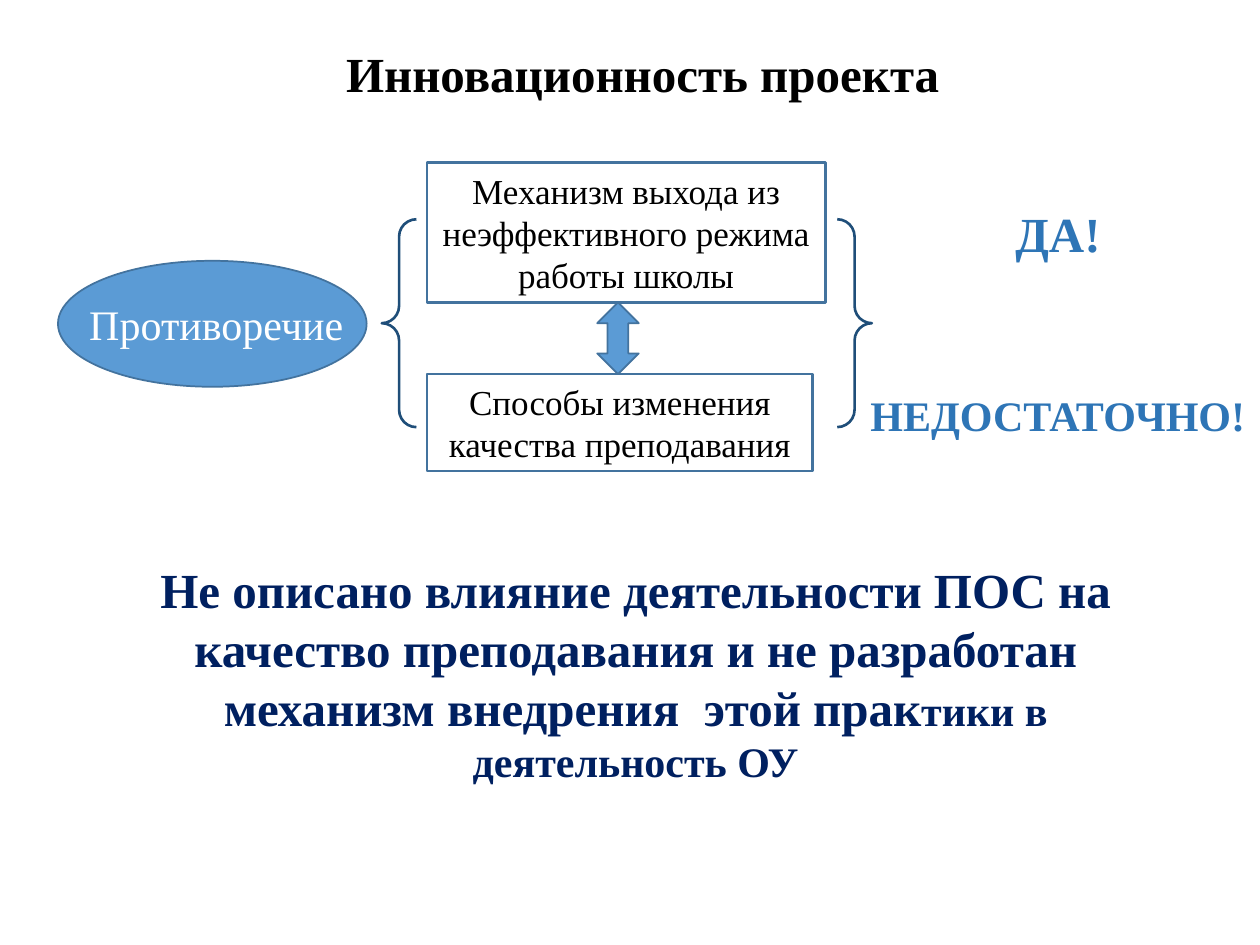
import pptx
from pptx.dml.color import RGBColor
from pptx.enum.shapes import MSO_SHAPE
from pptx.enum.text import MSO_ANCHOR, PP_ALIGN
from pptx.util import Inches, Pt

COLORS = {
    "black": "000000",
    "white": "FFFFFF",
    "fill": "5B9BD5",
    "outline": "43739E",
    "brace": "1F4E79",
    "verdict": "2E75B6",
    "conclusion": "002060",
}


def write(shape, text, size, color, bold=False, align=PP_ALIGN.LEFT):
    frame = shape.text_frame
    frame.word_wrap = True
    paragraph = frame.paragraphs[0]
    paragraph.text = text
    paragraph.alignment = align
    paragraph.font.name = "Times New Roman"
    paragraph.font.size = Pt(size)
    paragraph.font.bold = bold
    paragraph.font.color.rgb = RGBColor.from_string(COLORS[color])
    return paragraph


def add_outlined(kind, box, line_color, line_width, fill=None):
    shape = slide.shapes.add_shape(kind, *map(Inches, box))
    shape.shadow.inherit = False
    shape.line.color.rgb = RGBColor.from_string(COLORS[line_color])
    shape.line.width = Pt(line_width)
    if fill:
        shape.fill.solid()
        shape.fill.fore_color.rgb = RGBColor.from_string(COLORS[fill])
    else:
        shape.fill.background()
    return shape


prs = pptx.Presentation()
prs.slide_width = Inches(10)
prs.slide_height = Inches(7.5)
slide = prs.slides.add_slide(prs.slide_layouts[5])

title = slide.shapes.title
title.left, title.top = Inches(0.79), Inches(-0.59)
title.width, title.height = Inches(8.62), Inches(1.45)
heading = write(title, "Инновационность проекта", 28, "black", True, PP_ALIGN.CENTER)
heading.line_spacing = 0.9
title.text_frame.vertical_anchor = MSO_ANCHOR.BOTTOM
title.text_frame.margin_left = title.text_frame.margin_right = Inches(0.07)
title.text_frame.margin_top = title.text_frame.margin_bottom = Inches(0.04)

# The two sides of the contradiction
for box, text in [
    ((3.39, 1.29, 3.16, 1.11), "Механизм выхода из неэффективного режима работы школы"),
    ((3.39, 2.97, 3.06, 0.77), "Способы изменения качества преподавания"),
]:
    side = add_outlined(MSO_SHAPE.RECTANGLE, box, "outline", 1.5)
    write(side, text, 20, "black", align=PP_ALIGN.CENTER)

add_outlined(MSO_SHAPE.OVAL, (0.46, 2.07, 2.45, 1), "outline", 1, "fill")
add_outlined(MSO_SHAPE.UP_DOWN_ARROW, (4.74, 2.4, 0.33, 0.57), "outline", 1, "fill")
add_outlined(MSO_SHAPE.DOUBLE_BRACE, (3.03, 1.74, 3.89, 1.65), "brace", 1.5)

for box, text, size, color, bold, wrap in [
    ((7.96, 1.57, 1.84, 0.57), "ДА!", 28, "verdict", True, True),
    ((6.81, 3.04, 3.2, 0.5), "НЕДОСТАТОЧНО!", 24, "verdict", True, False),
    ((0.61, 2.32, 2.31, 0.5), "Противоречие", 24, "white", False, True),
]:
    label = slide.shapes.add_textbox(*map(Inches, box))
    write(label, text, size, color, bold)
    label.text_frame.word_wrap = wrap

conclusion = slide.shapes.add_textbox(Inches(0.92), Inches(4.39), Inches(8.25), Inches(1.99))
statement = write(
    conclusion,
    "Не описано влияние деятельности ПОС на качество преподавания "
    "и не разработан механизм внедрения  этой прак",
    28, "conclusion", True, PP_ALIGN.CENTER,
)
ending = statement.add_run()
ending.text = "тики в деятельность ОУ"
ending.font.size = Pt(24)

prs.save("out.pptx")
